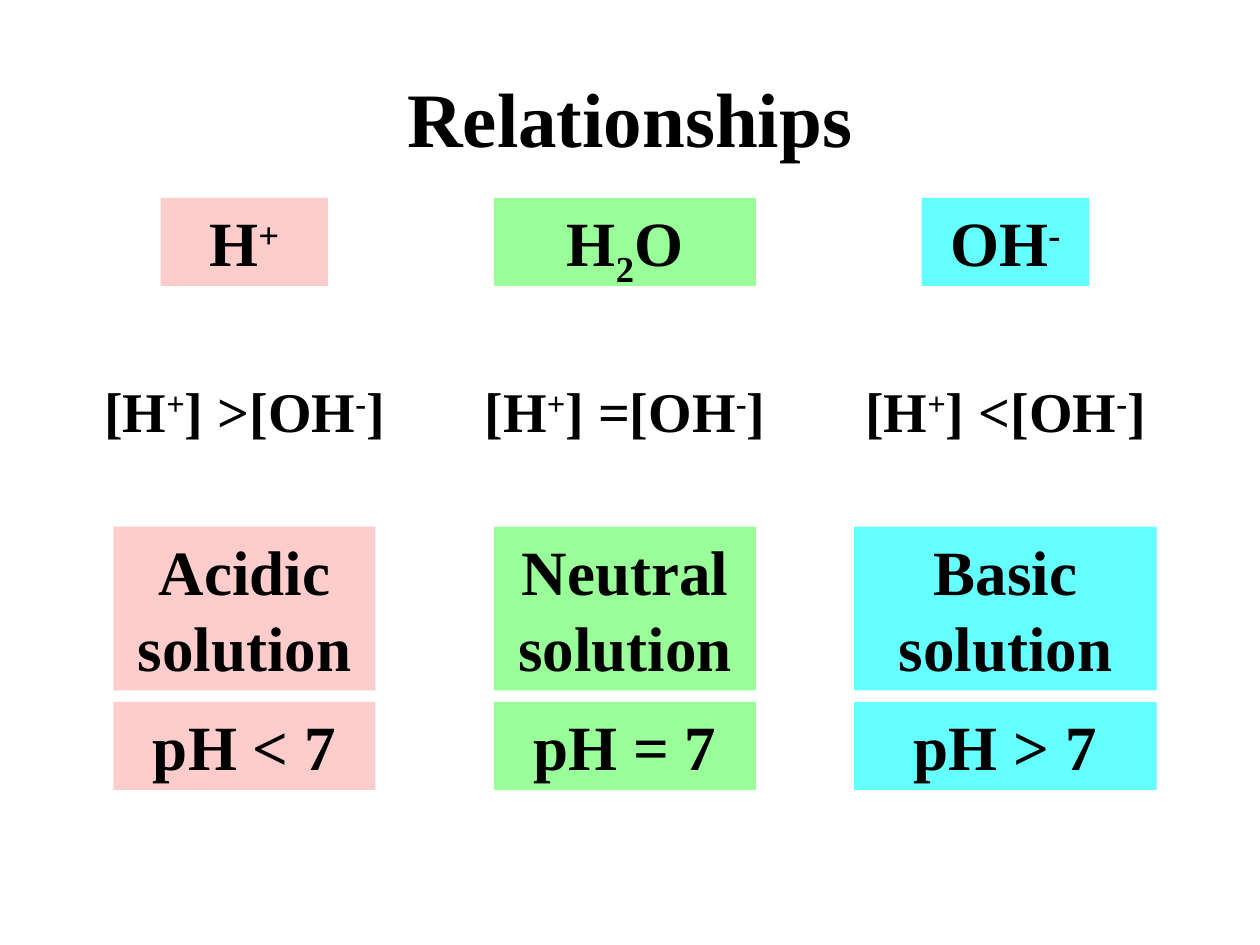
"""Build the slide relating ion concentrations, solution type and pH."""
import pptx
import pptx.util
import pptx.dml.color
import pptx.enum.shapes
import pptx.enum.text

Inches = pptx.util.Inches
FONT = "Times New Roman"
COLORS = {"text": "000000", "acid": "FFCCCC", "neutral": "99FF99", "base": "66FFFF"}
SUPER, SUB = 30000, -25000
PLUS, MINUS = ("+", SUPER), ("-", SUPER)


def concentrations(sign):
    return [("[H", 0), PLUS, (f"] {sign}[OH", 0), MINUS, ("]", 0)]


COLUMNS = [
    {"color": "acid", "ion": [("H", 0), PLUS], "ion_w": 1.33, "sign": ">",
     "eq_w": 2.89, "name": "Acidic solution", "ph": "pH < 7", "box_w": 2.08},
    {"color": "neutral", "ion": [("H", 0), ("2", SUB), ("O", 0)], "ion_w": 2.08, "sign": "=",
     "eq_w": 3.21, "name": "Neutral solution", "ph": "pH = 7", "box_w": 2.08},
    {"color": "base", "ion": [("OH", 0), MINUS], "ion_w": 1.33, "sign": "<",
     "eq_w": 2.89, "name": "Basic solution", "ph": "pH > 7", "box_w": 2.4},
]
FIRST_CENTER, COLUMN_STEP = 1.94, 3.02


def rgb(name):
    return pptx.dml.color.RGBColor.from_string(COLORS[name])


def write(tf, pieces, size):
    tf.word_wrap = True
    p = tf.paragraphs[0]
    p.alignment = pptx.enum.text.PP_ALIGN.CENTER
    for text, baseline in pieces:
        r = p.add_run()
        r.text = text
        r.font.name, r.font.size, r.font.bold = FONT, pptx.util.Pt(size), True
        r.font.color.rgb = rgb("text")
        if baseline:
            r.font._element.set("baseline", str(baseline))


def add_label(s, center, top, width, height, pieces, size, color=None):
    frame = [Inches(v) for v in (center - width / 2, top, width, height)]
    if color:
        sp = s.shapes.add_shape(pptx.enum.shapes.MSO_SHAPE.RECTANGLE, *frame)
        sp.shadow.inherit = False
        sp.fill.solid()
        sp.fill.fore_color.rgb = rgb(color)
        sp.line.fill.background()
    else:
        sp = s.shapes.add_textbox(*frame)
    tf = sp.text_frame
    tf.vertical_anchor = pptx.enum.text.MSO_ANCHOR.TOP
    write(tf, pieces, size)
    tf.auto_size = pptx.enum.text.MSO_AUTO_SIZE.SHAPE_TO_FIT_TEXT


def main():
    prs = pptx.Presentation()
    prs.slide_width, prs.slide_height = Inches(10), Inches(7.5)
    s = prs.slides.add_slide(prs.slide_layouts[5])

    title = s.shapes.title
    title.left, title.top, title.width, title.height = map(Inches, (0.5, 0.3, 9, 1.25))
    title.text_frame.vertical_anchor = pptx.enum.text.MSO_ANCHOR.MIDDLE
    write(title.text_frame, [("Relationships", 0)], 44)

    for i, col in enumerate(COLUMNS):
        center = FIRST_CENTER + i * COLUMN_STEP
        color = col["color"]
        add_label(s, center, 1.57, col["ion_w"], 0.7, col["ion"], 36, color)
        add_label(s, center, 2.94, col["eq_w"], 0.63, concentrations(col["sign"]), 32)
        add_label(s, center, 4.18, col["box_w"], 1.3, [(col["name"], 0)], 36, color)
        add_label(s, center, 5.57, col["box_w"], 0.7, [(col["ph"], 0)], 36, color)

    prs.save("out.pptx")


if __name__ == "__main__":
    main()
